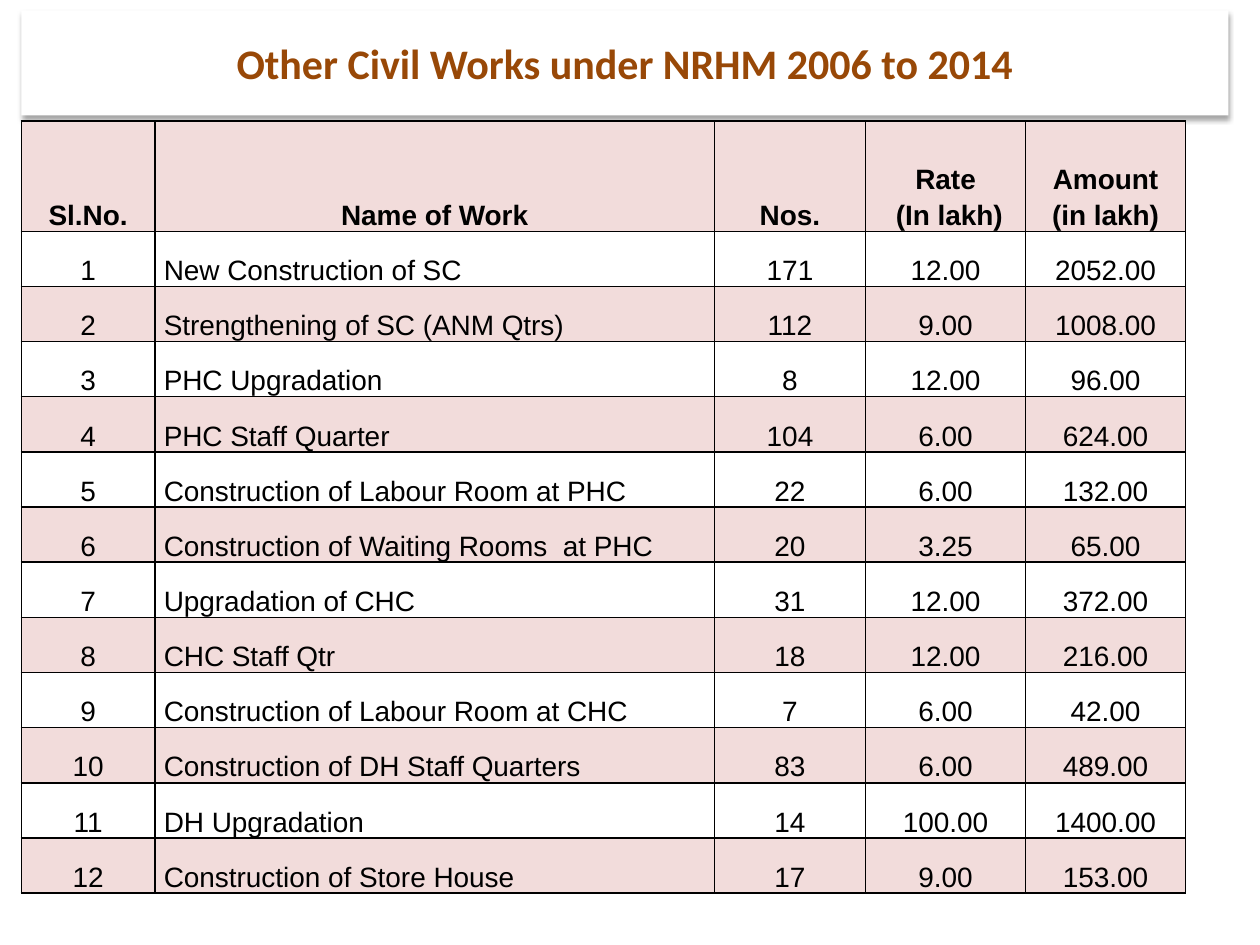
from lxml.etree import SubElement
from pptx import Presentation
from pptx.dml.color import RGBColor
from pptx.enum.text import MSO_ANCHOR, MSO_AUTO_SIZE, PP_ALIGN
from pptx.oxml import parse_xml
from pptx.oxml.ns import nsdecls, qn
from pptx.util import Inches, Pt

BLACK = RGBColor(0x00, 0x00, 0x00)
WHITE = RGBColor(0xFF, 0xFF, 0xFF)
BROWN = RGBColor(0x98, 0x48, 0x07)
PINK = RGBColor(0xF2, 0xDC, 0xDB)

TITLE = "Other Civil Works under NRHM 2006 to 2014"
HEADERS = ("Sl.No.", "Name of Work", "Nos.", "Rate\n (In lakh)", "Amount (in lakh)")
WORKS = (
    ("New Construction of SC", "171", "12.00", "2052.00"),
    ("Strengthening of SC (ANM Qtrs)", "112", "9.00", "1008.00"),
    ("PHC Upgradation", "8", "12.00", "96.00"),
    ("PHC Staff Quarter", "104", "6.00", "624.00"),
    ("Construction of Labour Room at PHC", "22", "6.00", "132.00"),
    ("Construction of Waiting Rooms  at PHC", "20", "3.25", "65.00"),
    ("Upgradation of CHC", "31", "12.00", "372.00"),
    ("CHC Staff Qtr", "18", "12.00", "216.00"),
    ("Construction of Labour Room at CHC", "7", "6.00", "42.00"),
    ("Construction of DH Staff Quarters", "83", "6.00", "489.00"),
    ("DH Upgradation", "14", "100.00", "1400.00"),
    ("Construction of Store House", "17", "9.00", "153.00"),
)
COLUMN_WIDTHS = (1.06, 4.44, 1.2, 1.27, 1.27)
NAME_COLUMN = 1


class SlideBuilder:
    title_font = "Calibri"
    table_font = "Arial"
    title_size = Pt(24)
    table_size = Pt(16)
    border_width = Pt(1)
    line_spacing = 1.15

    def __init__(self, slide):
        self.slide = slide

    def add_title(self, text, left, top, width, height):
        title = self.slide.shapes.title
        title.left, title.top, title.width, title.height = left, top, width, height
        title.fill.solid()
        title.fill.fore_color.rgb = WHITE
        self.add_shadow(title)
        frame = title.text_frame
        frame.text = text
        frame.word_wrap = True
        frame.auto_size = MSO_AUTO_SIZE.SHAPE_TO_FIT_TEXT
        frame.vertical_anchor = MSO_ANCHOR.MIDDLE
        paragraph = frame.paragraphs[0]
        paragraph.alignment = PP_ALIGN.CENTER
        self.format_font(paragraph.font, self.title_font, self.title_size, BROWN, True)

    def add_table(self, rows, left, top, height, column_widths):
        widths = [Inches(width) for width in column_widths]
        table = self.slide.shapes.add_table(
            len(rows), len(widths), left, top, sum(widths), height
        ).table
        table.horz_banding = False
        for column, width in zip(table.columns, widths):
            column.width = width
        row_height = height // (len(rows) + 1)
        for row_index, values in enumerate(rows):
            is_header = row_index == 0
            table.rows[row_index].height = row_height * 2 if is_header else row_height
            for column_index, text in enumerate(values):
                is_centred = is_header or column_index != NAME_COLUMN
                self.format_cell(
                    table.cell(row_index, column_index),
                    text,
                    PP_ALIGN.CENTER if is_centred else PP_ALIGN.LEFT,
                    is_header,
                    row_index % 2 == 0,
                )

    def format_cell(self, cell, text, alignment, bold, shaded):
        cell.text = text
        cell.vertical_anchor = MSO_ANCHOR.BOTTOM
        cell.margin_left = cell.margin_right = Inches(0.07)
        cell.margin_top = cell.margin_bottom = 0
        for paragraph in cell.text_frame.paragraphs:
            paragraph.alignment = alignment
            paragraph.line_spacing = self.line_spacing
            self.format_font(
                paragraph.font, self.table_font, self.table_size, BLACK, bold
            )
        self.add_borders(cell)
        if shaded:
            cell.fill.solid()
            cell.fill.fore_color.rgb = PINK
        else:
            cell.fill.background()

    def add_borders(self, cell):
        properties = cell._tc.get_or_add_tcPr()
        for side in ("a:lnL", "a:lnR", "a:lnT", "a:lnB"):
            line = SubElement(properties, qn(side), w=str(self.border_width))
            fill = SubElement(line, qn("a:solidFill"))
            SubElement(fill, qn("a:srgbClr"), val=str(BLACK))

    def add_shadow(self, shape):
        shape._element.spPr.append(parse_xml(
            f'<a:effectLst {nsdecls("a")}>'
            f'<a:outerShdw blurRad="{Pt(3.1)}" dist="{Pt(1.8)}" dir="5400000" rotWithShape="0">'
            f'<a:srgbClr val="{BLACK}"><a:alpha val="35000"/></a:srgbClr>'
            '</a:outerShdw></a:effectLst>'
        ))

    def format_font(self, font, name, size, color, bold):
        font.name = name
        font.size = size
        font.bold = bold
        font.color.rgb = color


def main():
    presentation = Presentation()
    presentation.slide_width = Inches(10)
    presentation.slide_height = Inches(7.5)
    title_only_layout = presentation.slide_layouts[5]
    builder = SlideBuilder(presentation.slides.add_slide(title_only_layout))
    left = Inches(0.17)
    builder.add_title(TITLE, left, Inches(0.25), Inches(9.58), Inches(0.5))
    rows = [HEADERS] + [
        (str(number), *work) for number, work in enumerate(WORKS, start=1)
    ]
    builder.add_table(rows, left, Inches(0.96), Inches(6.13), COLUMN_WIDTHS)
    presentation.save("out.pptx")


if __name__ == "__main__":
    main()
